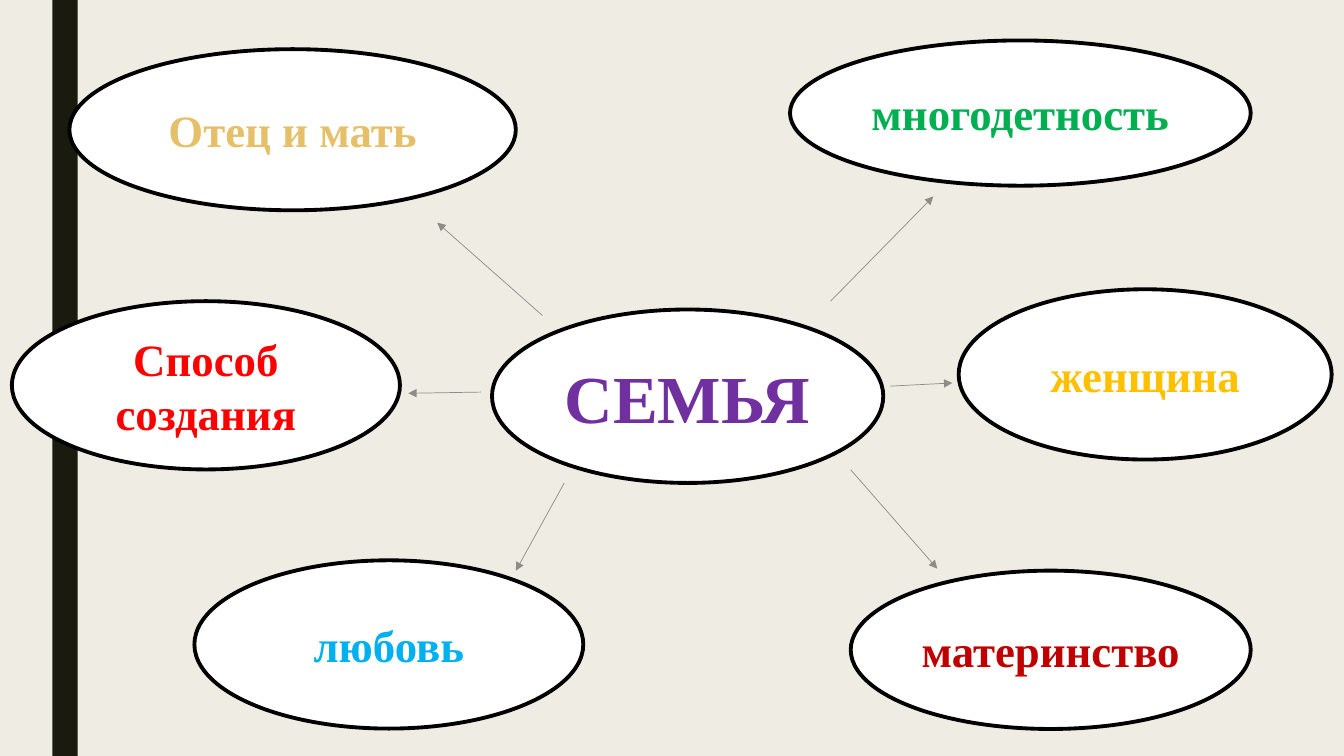
from dataclasses import dataclass

from lxml import etree
from pptx import Presentation
from pptx.dml.color import RGBColor
from pptx.enum.shapes import MSO_CONNECTOR, MSO_SHAPE
from pptx.enum.text import MSO_ANCHOR, PP_ALIGN
from pptx.oxml.ns import qn
from pptx.slide import Slide
from pptx.util import Cm, Pt

ELLIPSE = MSO_SHAPE.OVAL
RECTANGLE = MSO_SHAPE.RECTANGLE
STRAIGHT = MSO_CONNECTOR.STRAIGHT
MIDDLE = MSO_ANCHOR.MIDDLE
CENTER = PP_ALIGN.CENTER


@dataclass(frozen=True)
class Theme:
    font: str = "Times New Roman"
    background: str = "EFEDE3"
    stripe: str = "191B0E"
    fill: str = "FFFFFF"
    outline: str = "000000"
    arrow: str = "8C8D86"
    topic_size: int = 48
    idea_size: int = 32
    outline_width: float = 2.75
    arrow_width: float = 0.5


@dataclass(frozen=True)
class Bubble:
    text: str
    color: str
    left: float
    top: float
    width: float
    height: float
    size: int


@dataclass(frozen=True)
class Arrow:
    start: tuple[float, float]
    end: tuple[float, float]


THEME = Theme()

BUBBLES = [
    Bubble("СЕМЬЯ", "7030A0", 12.4, 7.8, 9.86, 4.37, THEME.topic_size),
    Bubble("Отец и мать", "E6C069", 1.75, 1.24, 11.25, 4.06, THEME.idea_size),
    Bubble("Способ создания", "FF0000", 0.3, 7.59, 9.78, 4.24, THEME.idea_size),
    Bubble("многодетность", "00B050", 19.91, 1.02, 11.61, 3.66, THEME.idea_size),
    Bubble("материнство", "C00000", 21.44, 14.38, 10.08, 3.99, THEME.idea_size),
    Bubble("женщина", "FFC000", 24.16, 7.29, 9.4, 4.29, THEME.idea_size),
    Bubble("любовь", "00B0F0", 4.9, 14.12, 9.8, 4.24, THEME.idea_size),
]

ARROWS = [
    Arrow((13.67, 7.95), (11.02, 5.61)),
    Arrow((20.93, 7.59), (23.52, 4.95)),
    Arrow((12.12, 9.88), (10.29, 9.91)),
    Arrow((22.43, 9.73), (24.0, 9.65)),
    Arrow((14.22, 12.17), (13.0, 14.38)),
    Arrow((21.44, 11.84), (23.62, 14.33)),
]


def rgb(color: str) -> RGBColor:
    return RGBColor.from_string(color)


def draw_stripe(page: Slide, height: int) -> None:
    stripe = page.shapes.add_shape(RECTANGLE, Cm(1.32), 0, Cm(0.64), height)
    stripe.shadow.inherit = False
    stripe.fill.solid()
    stripe.fill.fore_color.rgb = rgb(THEME.stripe)
    stripe.line.fill.background()


def draw_bubble(page: Slide, bubble: Bubble) -> None:
    box = page.shapes.add_shape(
        ELLIPSE, Cm(bubble.left), Cm(bubble.top), Cm(bubble.width), Cm(bubble.height)
    )
    box.shadow.inherit = False
    box.fill.solid()
    box.fill.fore_color.rgb = rgb(THEME.fill)
    box.line.color.rgb = rgb(THEME.outline)
    box.line.width = Pt(THEME.outline_width)

    frame = box.text_frame
    frame.text = bubble.text
    frame.word_wrap = True
    frame.vertical_anchor = MIDDLE
    para = frame.paragraphs[0]
    para.alignment = CENTER
    font = para.runs[0].font
    font.name = THEME.font
    font.size = Pt(bubble.size)
    font.bold = True
    font.color.rgb = rgb(bubble.color)


def draw_arrow(page: Slide, arrow: Arrow) -> None:
    points = [Cm(value) for value in arrow.start + arrow.end]
    connector = page.shapes.add_connector(STRAIGHT, *points)
    connector.line.color.rgb = rgb(THEME.arrow)
    connector.line.width = Pt(THEME.arrow_width)
    properties = connector.element.spPr
    outline = properties.find(qn("a:ln"))
    etree.SubElement(outline, qn("a:tailEnd"), type="triangle")
    etree.SubElement(properties, qn("a:effectLst"))


def main() -> None:
    deck = Presentation()
    deck.slide_width = Cm(33.87)
    deck.slide_height = Cm(19.05)
    page = deck.slides.add_slide(deck.slide_layouts[6])
    page.background.fill.solid()
    page.background.fill.fore_color.rgb = rgb(THEME.background)

    draw_stripe(page, deck.slide_height)
    for bubble in BUBBLES:
        draw_bubble(page, bubble)
    for arrow in ARROWS:
        draw_arrow(page, arrow)
    deck.save("out.pptx")


if __name__ == "__main__":
    main()
